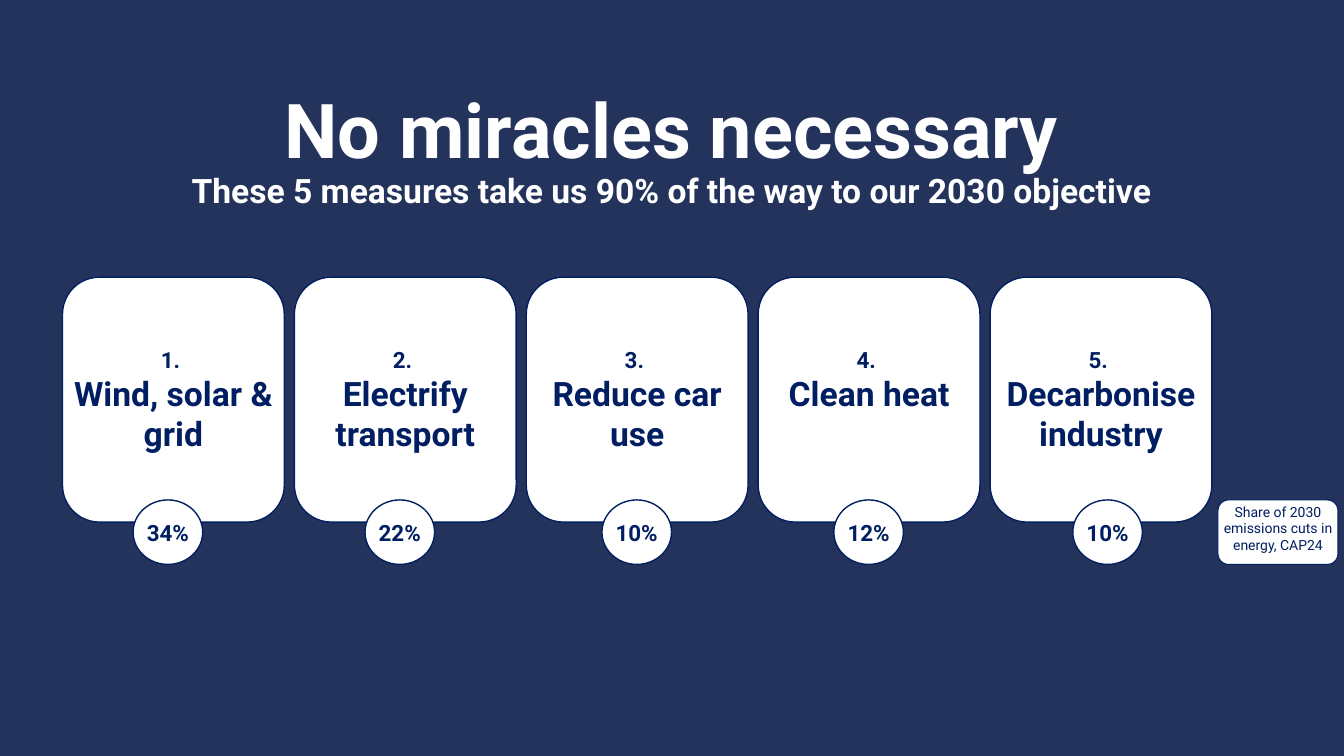
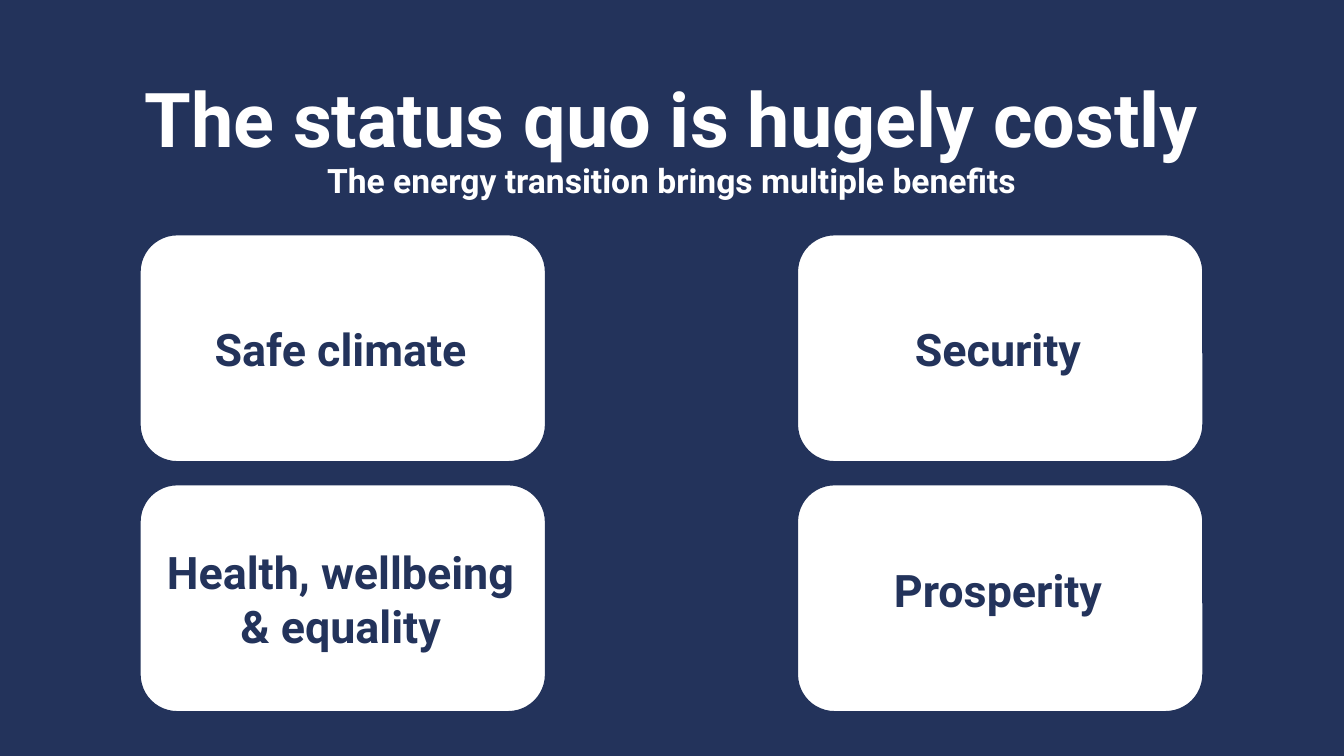
from pptx import Presentation
from pptx.dml.color import RGBColor
from pptx.enum.shapes import MSO_SHAPE
from pptx.enum.text import MSO_ANCHOR, MSO_AUTO_SIZE, PP_ALIGN
from pptx.util import Inches, Pt

ROUNDED = MSO_SHAPE.ROUNDED_RECTANGLE
OVAL = MSO_SHAPE.OVAL
NOTE = MSO_SHAPE.FLOWCHART_ALTERNATE_PROCESS
TOP, MIDDLE = MSO_ANCHOR.TOP, MSO_ANCHOR.MIDDLE
CENTER = PP_ALIGN.CENTER
NO_AUTOFIT = MSO_AUTO_SIZE.NONE

NAVY = RGBColor(0x23, 0x33, 0x5B)
INK = RGBColor(0x00, 0x1E, 0x61)
OUTLINE = RGBColor(0x00, 0x20, 0x60)
WHITE = RGBColor(0xFF, 0xFF, 0xFF)
FONT = "Roboto"
TITLE_ONLY = 5

# Measures slide: one row of cards, sizes in inches
CARD_LEFT, CARD_TOP, CARD_PITCH = 0.62, 2.75, 2.3
CARD_SIZE = (2.2, 2.43)
BADGE_TOP, BADGE_SIZE = 4.96, (0.69, 0.64)
# Name, share of cuts, badge offset from the card, space kept free below the text
MEASURES = [
    ("Wind, solar & grid", "34%", 0.7, 0),
    ("Electrify transport", "22%", 0.7, 0),
    ("Reduce car use", "10%", 0.75, 0),
    ("Clean heat", "12%", 0.75, 0.4),
    ("Decarbonise industry", "10%", 0.82, 0),
]

# Benefits slide: a grid of two columns and two rows
BENEFIT_LEFT, BENEFIT_TOP = 1.38, 2.32
BENEFIT_PITCH = (6.52, 2.48)
BENEFIT_SIZE = (4.04, 2.27)
BENEFITS = [
    [("Safe climate", 0), ("Security", 0)],
    [("Health, wellbeing & equality", 0), ("Prosperity", 0.18)],
]


def apply_format(target, values):
    for name, value in values.items():
        setattr(target, name, value)


def add_run(paragraph, text, size, color, bold=True):
    run = paragraph.add_run()
    run.text = text
    apply_format(run.font, {"name": FONT, "size": Pt(size), "bold": bold})
    run.font.color.rgb = color


def add_titled_slide(prs, headline, subtitle, top):
    slide = prs.slides.add_slide(prs.slide_layouts[TITLE_ONLY])
    title = slide.shapes.title
    apply_format(title, {"left": Inches(0.91), "top": Inches(top),
                         "width": Inches(11.5), "height": Inches(1.45)})
    apply_format(title.text_frame, {"vertical_anchor": MIDDLE, "word_wrap": True,
                                    "auto_size": NO_AUTOFIT})
    paragraph = title.text_frame.paragraphs[0]
    apply_format(paragraph, {"alignment": CENTER, "line_spacing": 0.9})
    add_run(paragraph, headline, 54, WHITE)
    paragraph.add_line_break()
    add_run(paragraph, subtitle, 24, WHITE)
    return slide


def add_panel(slide, kind, position, size, lines, color=INK, bold=True,
              outline=OUTLINE, weight=1, anchor=MIDDLE, right=0, bottom=0):
    """Add a white shape holding centred (text, size) lines."""
    panel = slide.shapes.add_shape(kind, *map(Inches, position + size))
    panel.shadow.inherit = False
    panel.fill.solid()
    panel.fill.fore_color.rgb = WHITE
    panel.line.color.rgb = outline
    panel.line.width = Pt(weight)
    frame = panel.text_frame
    apply_format(frame, {"margin_left": 0, "margin_top": 0,
                         "margin_right": Inches(right),
                         "margin_bottom": Inches(bottom),
                         "vertical_anchor": anchor, "word_wrap": True})
    for index, (text, points) in enumerate(lines):
        paragraph = frame.add_paragraph() if index else frame.paragraphs[0]
        paragraph.alignment = CENTER
        add_run(paragraph, text, points, color, bold)


def build_measures(prs):
    slide = add_titled_slide(
        prs, "No miracles necessary",
        "These 5 measures take us 90% of the way to our 2030 objective", 0.78)
    for index, (name, share, offset, free) in enumerate(MEASURES):
        left = CARD_LEFT + index * CARD_PITCH
        add_panel(slide, ROUNDED, (left, CARD_TOP), CARD_SIZE,
                  [(f"{index + 1}. ", 16), (name, 24)], bottom=free)
        add_panel(slide, OVAL, (left + offset, BADGE_TOP), BADGE_SIZE, [(share, 16)])
    # Key to the percentages
    add_panel(slide, NOTE, (12.08, BADGE_TOP), (1.19, 0.64),
              [("Share of 2030 emissions cuts in energy, CAP24", 10)],
              bold=False, weight=0.75, anchor=TOP)


def build_benefits(prs):
    slide = add_titled_slide(
        prs, "The status quo is hugely costly",
        "The energy transition brings multiple benefits", 0.68)
    for row, benefits in enumerate(BENEFITS):
        for column, (benefit, free) in enumerate(benefits):
            position = (BENEFIT_LEFT + column * BENEFIT_PITCH[0],
                        BENEFIT_TOP + row * BENEFIT_PITCH[1])
            add_panel(slide, ROUNDED, position, BENEFIT_SIZE, [(benefit, 32)],
                      color=NAVY, outline=NAVY, weight=2.25, right=0.04, bottom=free)


def main():
    prs = Presentation()
    prs.slide_width, prs.slide_height = Inches(13.33), Inches(7.5)
    # Shared background
    background = prs.slide_master.background.fill
    background.solid()
    background.fore_color.rgb = NAVY
    build_measures(prs)
    build_benefits(prs)
    prs.save("out.pptx")


if __name__ == "__main__":
    main()
